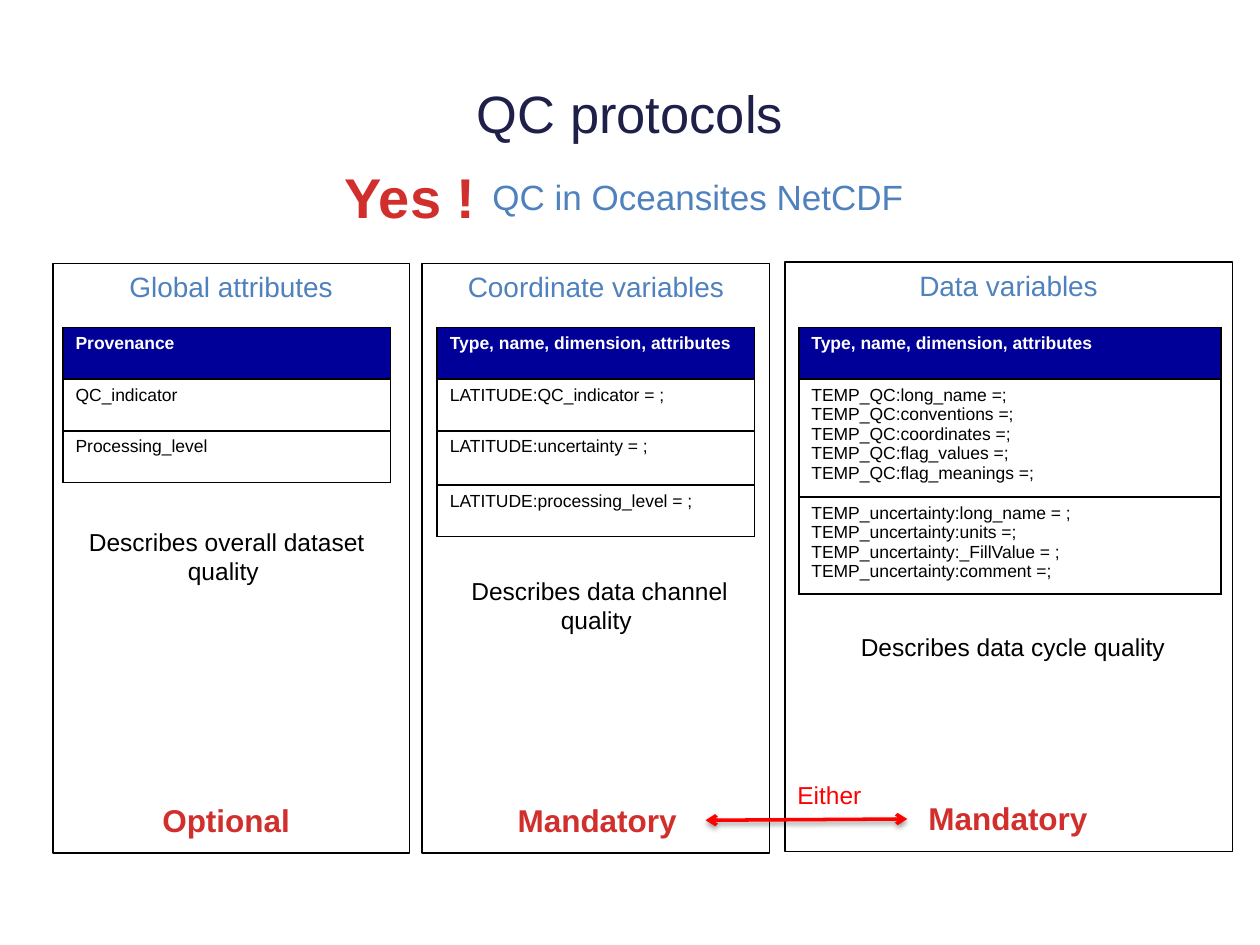
from lxml.etree import SubElement
from pptx import Presentation
from pptx.dml.color import RGBColor
from pptx.enum.shapes import MSO_CONNECTOR as Connector, MSO_SHAPE as Shape
from pptx.enum.text import MSO_ANCHOR as Anchor, PP_ALIGN as Align
from pptx.oxml import parse_xml
from pptx.oxml.ns import nsdecls, qn
from pptx.util import Inches, Pt

NAVY, BLUE, CRIMSON, RED = "1F204A", "4F81BD", "D02F2C", "FF0000"
BLACK, WHITE, HEADER = "000000", "FFFFFF", "000099"
LABEL = {"size": Pt(18), "bold": True}
ROW = 0.41

COLUMNS = [
    {
        "heading": "Global attributes", "panel": (0.42, 2.09, 2.83, 4.68),
        "table": (0.5, 2.6, 2.6), "heights": [ROW] * 3,
        "rows": ["Provenance", "QC_indicator", "Processing_level"],
        "summary": "Describes overall dataset quality ", "summary_box": (0.57, 4.13, 2.46, 0.57),
        "status": "Optional", "status_box": (1.19, 6.31, 1.23, 0.4),
    },
    {
        "heading": "Coordinate variables", "panel": (3.35, 2.09, 2.76, 4.68),
        "table": (3.47, 2.6, 2.52), "heights": [ROW, ROW, 0.43, ROW],
        "rows": ["Type, name, dimension, attributes", "LATITUDE:QC_indicator = ;",
                 "LATITUDE:uncertainty = ;", "LATITUDE:processing_level = ;"],
        "summary": "Describes data channel quality ", "summary_box": (3.53, 4.52, 2.46, 0.57),
        "status": "Mandatory", "status_box": (4.01, 6.31, 1.48, 0.4),
    },
    {
        "heading": "Data variables", "panel": (6.23, 2.08, 3.55, 4.68),
        "table": (6.34, 2.6, 3.35), "heights": [ROW, 0.93, 0.77],
        "rows": ["Type, name, dimension, attributes",
                 "TEMP_QC:long_name =;\nTEMP_QC:conventions =;\nTEMP_QC:coordinates =;\n"
                 "TEMP_QC:flag_values =;\nTEMP_QC:flag_meanings =;",
                 "TEMP_uncertainty:long_name = ;\nTEMP_uncertainty:units =;\n"
                 "TEMP_uncertainty:_FillValue = ;\nTEMP_uncertainty:comment =;"],
        "summary": "Describes data cycle quality", "summary_box": (6.4, 4.97, 3.28, 0.34),
        "status": "Mandatory", "status_box": (7.27, 6.29, 1.48, 0.4),
    },
]


def rgb(value):
    """Turn a hex string into a colour."""
    return RGBColor.from_string(value)


def inches(values):
    """Turn numbers into lengths."""
    return [Inches(value) for value in values]


class SlideBuilder:
    """Holds the text style and the current slide."""

    style = {"name": "Arial", "size": Pt(14), "bold": False}

    def __init__(self, slide):
        """Keep the slide to build on."""
        self.slide = slide

    def fill_text(self, frame, text, color=BLACK, align=Align.LEFT, **format_values):
        """Fill a text frame and format each paragraph."""
        frame.text = text
        for paragraph in frame.paragraphs:
            paragraph.alignment = align
            for name, value in {**self.style, **format_values}.items():
                setattr(paragraph.font, name, value)
            paragraph.font.color.rgb = rgb(color)

    def title(self, text, box):
        """Place and fill the title placeholder."""
        title = self.slide.shapes.title
        title.left, title.top, title.width, title.height = inches(box)
        title.text_frame.vertical_anchor = Anchor.MIDDLE
        self.fill_text(title.text_frame, text, NAVY, Align.CENTER, size=Pt(30))

    def text(self, text, box, color=BLACK, align=Align.LEFT, wrap=False, **format_values):
        """Add a text box."""
        frame = self.slide.shapes.add_textbox(*inches(box)).text_frame
        frame.word_wrap = wrap
        self.fill_text(frame, text, color, align, **format_values)

    def panel(self, heading, box):
        """Add an outlined rectangle with a heading at its top."""
        shape = self.slide.shapes.add_shape(Shape.RECTANGLE, *inches(box))
        shape.shadow.inherit = False
        shape.fill.background()
        shape.line.color.rgb = rgb(BLACK)
        shape.line.width = Pt(0.75)
        shape.text_frame.vertical_anchor = Anchor.TOP
        self.fill_text(shape.text_frame, heading, BLUE, Align.CENTER, size=Pt(16))

    def border(self, cell):
        """Draw the four borders of a cell."""
        properties = cell._tc.get_or_add_tcPr()
        for index, side in enumerate(("lnL", "lnR", "lnT", "lnB")):
            properties.insert(index, parse_xml(
                f'<a:{side} {nsdecls("a")} w="{Pt(1)}"><a:solidFill>'
                f'<a:srgbClr val="{BLACK}"/></a:solidFill></a:{side}>'))

    def table(self, rows, place, heights):
        """Add a one-column table with a dark header."""
        frame = self.slide.shapes.add_table(len(rows), 1, *inches((*place, sum(heights))))
        for index, (text, height) in enumerate(zip(rows, heights)):
            header = index == 0
            frame.table.rows[index].height = Inches(height)
            cell = frame.table.cell(index, 0)
            if header:
                cell.fill.solid()
                cell.fill.fore_color.rgb = rgb(HEADER)
            else:
                cell.fill.background()
            self.border(cell)
            self.fill_text(cell.text_frame, text, WHITE if header else BLACK, size=Pt(10), bold=header)

    def double_arrow(self, start, end):
        """Add a red line with two arrowheads and a soft shadow."""
        line = self.slide.shapes.add_connector(Connector.STRAIGHT, *inches((*start, *end)))
        line.line.color.rgb = rgb(RED)
        line.line.width = Pt(2)
        outline = line.line._get_or_add_ln()
        for tag in ("a:headEnd", "a:tailEnd"):
            SubElement(outline, qn(tag), type="arrow")
        line._element.spPr.append(parse_xml(
            f'<a:effectLst {nsdecls("a")}><a:outerShdw blurRad="{Pt(3.1)}" dist="{Pt(1.6)}" '
            f'dir="5400000" rotWithShape="0"><a:srgbClr val="{BLACK}"><a:alpha val="38000"/>'
            '</a:srgbClr></a:outerShdw></a:effectLst>'))


def main():
    """Build and save the slide."""
    presentation = Presentation()
    presentation.slide_width, presentation.slide_height = inches((10, 7.5))
    builder = SlideBuilder(presentation.slides.add_slide(presentation.slide_layouts[5]))
    builder.title("QC protocols", (0.5, 0.27, 9, 1.25))
    for column in COLUMNS:
        builder.panel(column["heading"], column["panel"])
    builder.text("Yes !", (2.63, 1.24, 1.25, 0.64), CRIMSON, Align.CENTER, size=Pt(32), bold=True)
    builder.text("QC in Oceansites NetCDF", (3.81, 1.34, 3.57, 0.44), BLUE, size=Pt(20))
    for column in COLUMNS:
        builder.table(column["rows"], column["table"], column["heights"])
        builder.text(column["status"], column["status_box"], CRIMSON, **LABEL)
        builder.text(column["summary"], column["summary_box"], align=Align.CENTER, wrap=True)
    builder.double_arrow((5.6, 6.51), (7.2, 6.5))
    builder.text("Either", (6.23, 6.14, 0.72, 0.34), RED)
    presentation.save("out.pptx")


if __name__ == "__main__":
    main()
